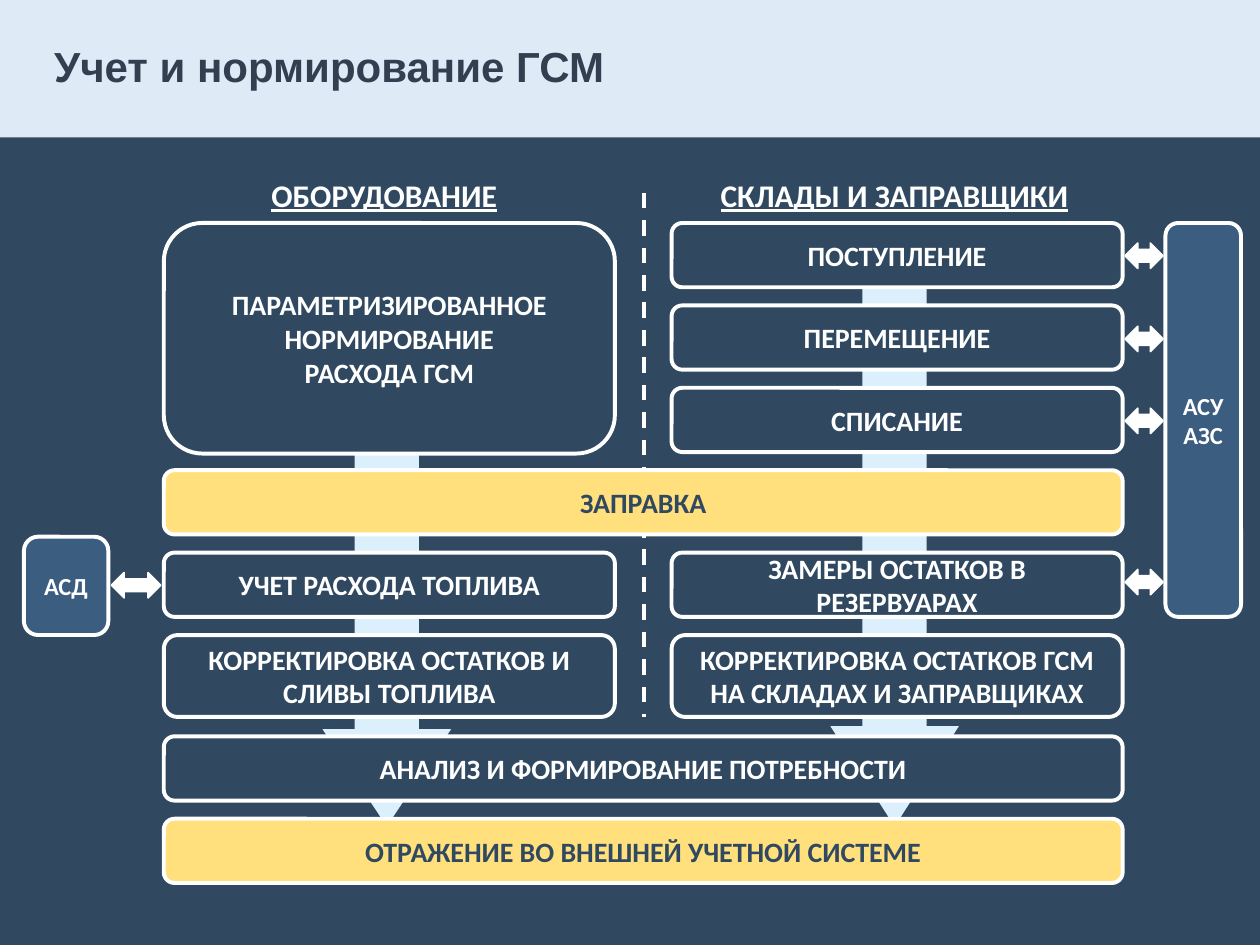
from pptx import Presentation
from pptx.dml.color import RGBColor
from pptx.enum import dml, shapes, text
from pptx.oxml.ns import qn
from pptx.util import Inches, Pt
from lxml import etree

NAVY = RGBColor(0x30, 0x49, 0x61)
STEEL = RGBColor(0x3A, 0x5D, 0x80)
GOLD = RGBColor(0xFF, 0xE0, 0x7D)
PALE = RGBColor(0xDE, 0xEB, 0xF7)
ICE = RGBColor(0xDB, 0xF0, 0xFC)
SLATE = RGBColor(0x33, 0x3F, 0x50)
WHITE = RGBColor(0xFF, 0xFF, 0xFF)

WIDE, HIGH = 10, 7.5
TOP, STEP, BAR, TALL = 1.77, 0.654, 0.51, 0.65
COLS, SPAN = (1.3, 5.33), 3.58
FULL = COLS[1] + SPAN - COLS[0]
KIND = shapes.MSO_SHAPE

TITLE = "Учет и нормирование ГСМ"
HEADS = ["ОБОРУДОВАНИЕ", "СКЛАДЫ И ЗАПРАВЩИКИ"]
STEPS = [
    (0, 0, 1.83, "ПАРАМЕТРИЗИРОВАННОЕ НОРМИРОВАНИЕ\vРАСХОДА ГСМ"),
    (1, 0, BAR, "ПОСТУПЛЕНИЕ"),
    (1, 1, BAR, "ПЕРЕМЕЩЕНИЕ"),
    (1, 2, BAR, "СПИСАНИЕ"),
    (0, 4, BAR, "УЧЕТ РАСХОДА ТОПЛИВА"),
    (1, 4, BAR, "ЗАМЕРЫ ОСТАТКОВ В РЕЗЕРВУАРАХ"),
    (0, 5, TALL, "КОРРЕКТИРОВКА ОСТАТКОВ И СЛИВЫ ТОПЛИВА"),
    (1, 5, TALL, "КОРРЕКТИРОВКА ОСТАТКОВ ГСМ НА СКЛАДАХ И ЗАПРАВЩИКАХ"),
]
BARS = [
    (3, GOLD, NAVY, "ЗАПРАВКА"),
    (6, NAVY, WHITE, "АНАЛИЗ И ФОРМИРОВАНИЕ ПОТРЕБНОСТИ"),
    (7, GOLD, NAVY, "ОТРАЖЕНИЕ ВО ВНЕШНЕЙ УЧЕТНОЙ СИСТЕМЕ"),
]
SIDES = [
    (0.19, 4.26, 0.67, 0.78, "АСД"),
    (9.25, TOP, 0.6, 4 * STEP + BAR, "АСУ АЗС"),
]
FLOWS = [(0, 3.61, 0.757), (1, 2.29, 0.781)]
LINKS = [(1.08, 4.645, 0.39)] + [
    (9.08, y, 0.3) for y in (2.03, 2.69, 3.34, 4.62)]


def row(n):
    return TOP + n * STEP + (TALL - BAR + 0.01 if n > 5 else 0)


def style(font, **vals):
    for key, val in vals.items():
        setattr(font, key, val)


def draw(kind, x, y, w, h, fill=None, line=None, weight=2.25):
    item = slide.shapes.add_shape(kind, *map(Inches, (x, y, w, h)))
    item.shadow.inherit = False
    if fill is None:
        item.fill.background()
    else:
        item.fill.solid()
        item.fill.fore_color.rgb = fill
    if line is None:
        item.line.fill.background()
    else:
        item.line.color.rgb = line
        item.line.width = Pt(weight)
    return item


def label(item, words, size=16, color=WHITE, under=None):
    frame = item.text_frame
    frame.word_wrap = True
    frame.vertical_anchor = text.MSO_ANCHOR.MIDDLE
    para = frame.paragraphs[0]
    para.text = words
    para.alignment = text.PP_ALIGN.CENTER
    for run in para.runs:
        style(run.font, name="Calibri", size=Pt(size), bold=True, underline=under)
        run.font.color.rgb = color


def box(x, y, w, h, words, fill=NAVY, color=WHITE, size=16):
    label(draw(KIND.ROUNDED_RECTANGLE, x, y, w, h, fill, WHITE), words, size, color)


deck = Presentation()
deck.slide_width, deck.slide_height = Inches(WIDE), Inches(HIGH)
slide = deck.slides.add_slide(deck.slide_layouts[5])
slide.background.fill.solid()
slide.background.fill.fore_color.rgb = NAVY

band = draw(KIND.RECTANGLE, 0, 0, WIDE, 1.09, PALE)
title = slide.shapes.title
band._element.addnext(title._element)
title.left, title.top, title.width, title.height = map(Inches, (0.33, 0.16, 6.06, 0.78))
title.text_frame.text = TITLE
title.text_frame.vertical_anchor = text.MSO_ANCHOR.MIDDLE
para = title.text_frame.paragraphs[0]
para.alignment, para.line_spacing = text.PP_ALIGN.LEFT, 0.9
style(para.runs[0].font, name="Arial", size=Pt(24), bold=True)
para.runs[0].font.color.rgb = SLATE

rule = slide.shapes.add_connector(
    shapes.MSO_CONNECTOR.STRAIGHT, *map(Inches, (5.11, 1.53, 5.11, row(5) + TALL)))
rule.line.color.rgb, rule.line.width = WHITE, Pt(2.25)
rule.line.dash_style = dml.MSO_LINE.DASH
etree.SubElement(rule._element.spPr, qn("a:effectLst"))

for col, y, tip in FLOWS:
    flow = draw(KIND.DOWN_ARROW, COLS[col] + 1.26, y, 1.02, 6.56 - y, ICE)
    flow.adjustments[0], flow.adjustments[1] = 0.5, tip

for col, n, h, words in STEPS:
    box(COLS[col], row(n), SPAN, h, words)
for n, fill, color, words in BARS:
    box(COLS[0], row(n), FULL, BAR, words, fill, color)
for x, y, w, h, words in SIDES:
    box(x, y, w, h, words, STEEL, size=14)
for x, words in zip((1.52, 5.57), HEADS):
    label(draw(KIND.ROUNDED_RECTANGLE, x, 1.26, 3.06, 0.57), words, 18, under=True)
for x, y, size in LINKS:
    link = draw(KIND.UP_DOWN_ARROW, x - 0.1, y - size / 2, 0.2, size, WHITE, WHITE, 1)
    link.rotation = 90

deck.save("out.pptx")
